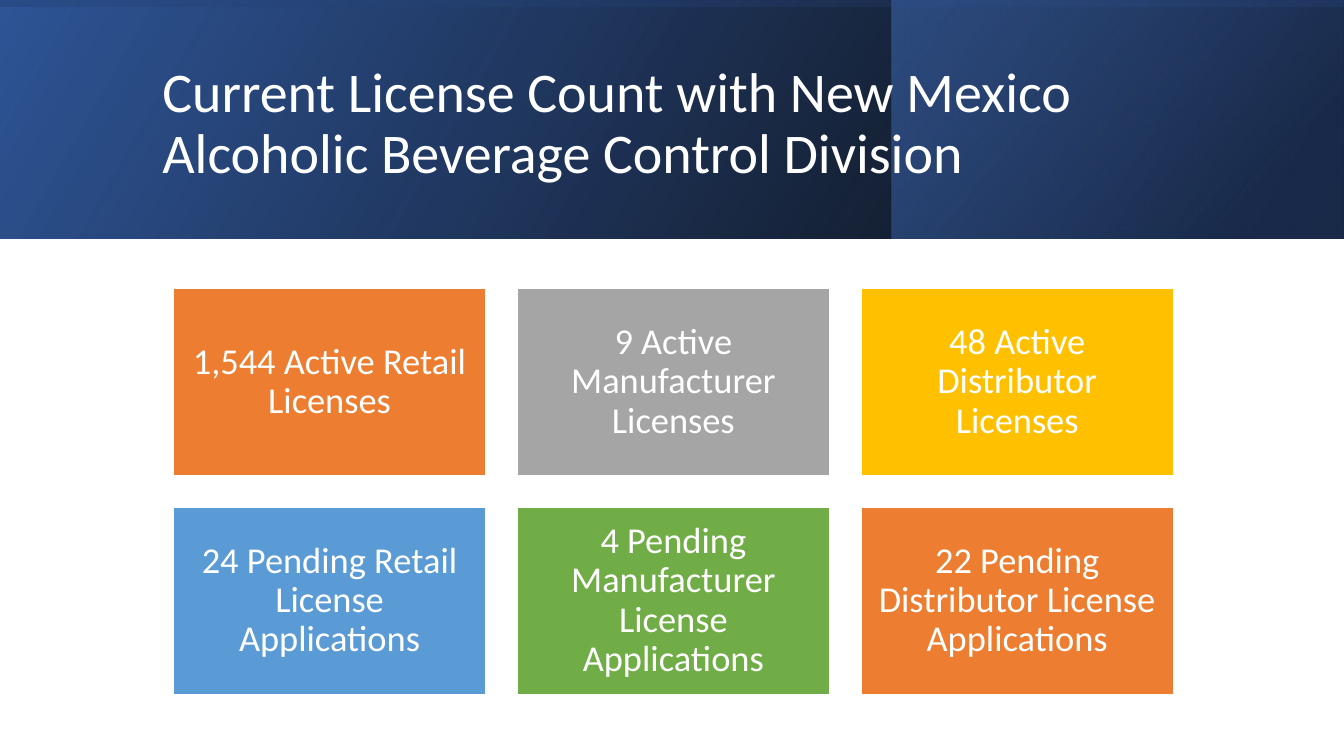
"""Build the slide with current and pending license counts."""
from lxml.etree import SubElement
from pptx import Presentation
from pptx.dml.color import RGBColor
from pptx.enum.shapes import MSO_SHAPE
from pptx.enum.text import MSO_ANCHOR, MSO_AUTO_SIZE, PP_ALIGN
from pptx.oxml.ns import qn
from pptx.util import Inches, Pt

COLORS = {
    "white": "FFFFFF", "black": "000000", "navy": "203864", "deep": "2F5597",
    "royal": "4472C4", "orange": "ED7D31", "gray": "A5A5A5",
    "gold": "FFC000", "blue": "5B9BD5", "green": "70AD47",
}


def set_gradient(sp, stops, angle):
    sp.fill.background()
    no_fill = sp._element.spPr.find(qn("a:noFill"))
    grad = SubElement(sp._element.spPr, qn("a:gradFill"), rotWithShape="1")
    no_fill.getparent().replace(no_fill, grad)
    stop_list = SubElement(grad, qn("a:gsLst"))
    for position, color, opacity in stops:
        gs = SubElement(stop_list, qn("a:gs"), pos=str(position * 1000))
        clr = SubElement(gs, qn("a:srgbClr"), val=COLORS[color])
        SubElement(clr, qn("a:alpha"), val=str(opacity * 1000))
    SubElement(grad, qn("a:lin"), ang=str(angle * 60000), scaled="0")


def set_text(tf, text, size, align):
    tf.text = text
    tf.word_wrap = True
    tf.auto_size = MSO_AUTO_SIZE.NONE
    tf.vertical_anchor = MSO_ANCHOR.MIDDLE
    p = tf.paragraphs[0]
    p.alignment = align
    p.line_spacing = 0.9
    p.font.name = "Calibri"
    p.font.size = Pt(size)
    p.font.color.rgb = RGBColor.from_string(COLORS["white"])


prs = Presentation()
prs.slide_width, prs.slide_height = Inches(13.33), Inches(7.5)
s = prs.slides.add_slide(prs.slide_layouts[5])

bands = [
    ((0, 0, 13.33, 2.37), 0, [(0, "black", 96), (100, "deep", 100)], 330),
    ((8.84, 0, 4.48, 2.37), 0, [(19, "navy", 68), (100, "royal", 48)], 320),
    ((5.48, -5.48, 2.37, 13.33), 270, [(23, "deep", 16), (99, "black", 45)], 350),
]
for box, rotation, stops, angle in bands:
    sp = s.shapes.add_shape(MSO_SHAPE.RECTANGLE, *map(Inches, box))
    sp.rotation = rotation
    sp._element.spPr.find(qn("a:xfrm")).set("flipH", "1")
    sp.shadow.inherit = False
    sp.line.fill.background()
    set_gradient(sp, stops, angle)

title = s.shapes.title
title.left, title.top = Inches(1.51), Inches(0.38)
title.width, title.height = Inches(10.63), Inches(1.72)
set_text(title.text_frame,
         "Current License Count with New Mexico Alcoholic Beverage Control Division",
         40, PP_ALIGN.LEFT)
s.shapes._spTree.append(title._element)

cards = [
    ("1,544 Active Retail Licenses", "orange"),
    ("9 Active Manufacturer Licenses", "gray"),
    ("48 Active Distributor Licenses", "gold"),
    ("24 Pending Retail License Applications", "blue"),
    ("4 Pending Manufacturer License Applications", "green"),
    ("22 Pending Distributor License Applications", "orange"),
]
for i, (text, color) in enumerate(cards):
    row, col = divmod(i, 3)
    sp = s.shapes.add_shape(
        MSO_SHAPE.RECTANGLE, Inches(1.72 + 3.41 * col), Inches(2.86 + 2.17 * row),
        Inches(3.1), Inches(1.86))
    sp.shadow.inherit = False
    sp.fill.solid()
    sp.fill.fore_color.rgb = RGBColor.from_string(COLORS[color])
    sp.line.color.rgb = RGBColor.from_string(COLORS["white"])
    sp.line.width = Pt(1)
    tf = sp.text_frame
    tf.margin_left = tf.margin_right = tf.margin_top = tf.margin_bottom = Inches(0.11)
    set_text(tf, text, 26, PP_ALIGN.CENTER)

prs.save("out.pptx")
